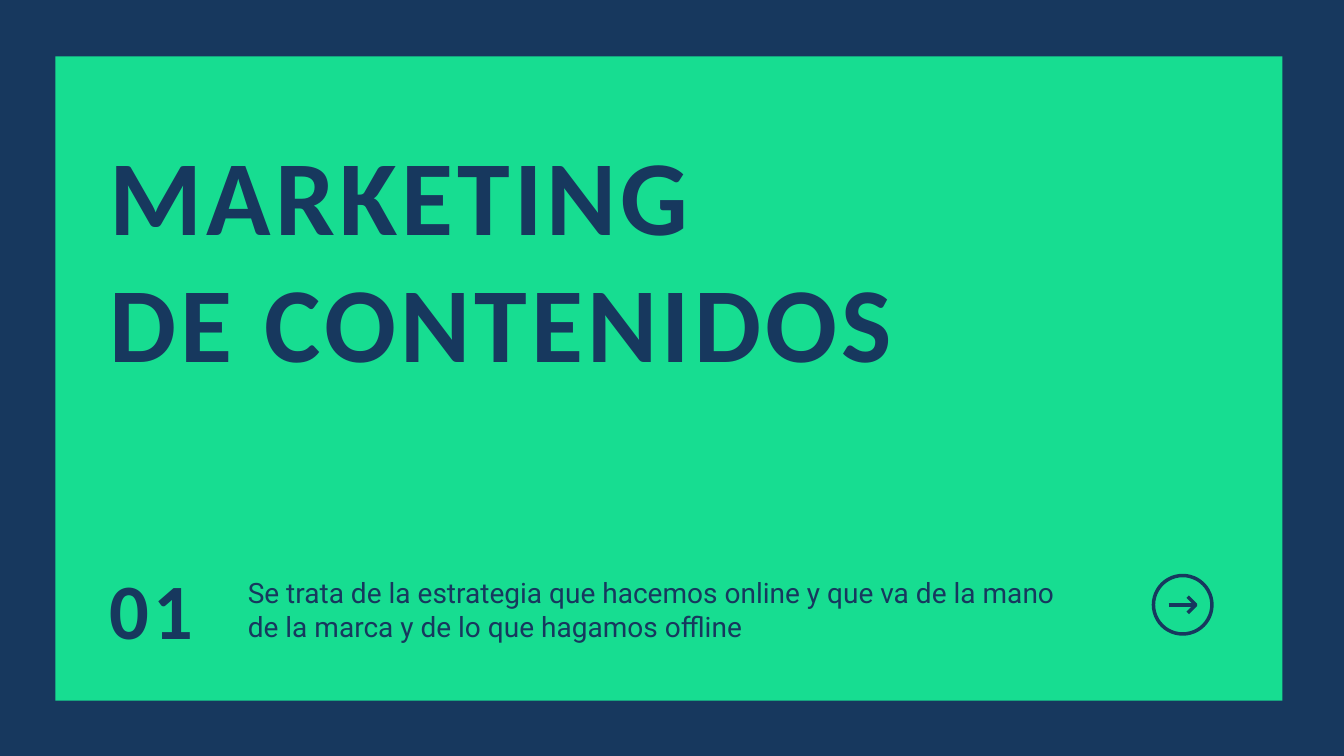
from lxml import etree
from pptx import Presentation
from pptx.dml.color import RGBColor
from pptx.enum.shapes import MSO_CONNECTOR, MSO_SHAPE
from pptx.enum.text import MSO_ANCHOR
from pptx.oxml.ns import qn
from pptx.util import Inches, Pt

RECTANGLE = MSO_SHAPE.RECTANGLE
OVAL = MSO_SHAPE.OVAL
STRAIGHT = MSO_CONNECTOR.STRAIGHT
TOP = MSO_ANCHOR.TOP
MIDDLE = MSO_ANCHOR.MIDDLE
NAVY = "17385E"
GREEN = "17DD91"
BLANK_LAYOUT = 6


def paint(fill, color):
    fill.solid()
    fill.fore_color.rgb = RGBColor.from_string(color)


def outline(shape):
    paint(shape.line.fill, NAVY)
    shape.line.width = Pt(2.5)


def add_panel(slide, left, top, width, height):
    panel = slide.shapes.add_shape(
        RECTANGLE, Inches(left), Inches(top), Inches(width), Inches(height))
    panel.shadow.inherit = False
    paint(panel.fill, GREEN)
    panel.line.fill.background()


def add_text(slide, lines, left, top, width, height, size, font,
             bold=False, spacing=0, anchor=TOP):
    box = slide.shapes.add_textbox(
        Inches(left), Inches(top), Inches(width), Inches(height))
    frame = box.text_frame
    frame.word_wrap = True
    frame.vertical_anchor = anchor
    frame.text = "\n".join(lines)
    for paragraph in frame.paragraphs:
        paragraph.font.size = Pt(size)
        paragraph.font.name = font
        paragraph.font.bold = bold
        paragraph.font.color.rgb = RGBColor.from_string(NAVY)
        if spacing:
            for run in paragraph.runs:
                run.font._element.set("spc", str(spacing * 100))


def add_arrow_button(slide, center_x, center_y, diameter):
    radius = diameter / 2
    ring = slide.shapes.add_shape(
        OVAL, Inches(center_x - radius), Inches(center_y - radius),
        Inches(diameter), Inches(diameter))
    ring.shadow.inherit = False
    ring.fill.background()
    outline(ring)

    tip = center_x + 0.13
    shaft = slide.shapes.add_connector(
        STRAIGHT, Inches(center_x - 0.14), Inches(center_y),
        Inches(tip - 0.01), Inches(center_y))
    outline(shaft)
    etree.SubElement(shaft._element.spPr, qn("a:effectLst"))

    back = Inches(tip - 0.08)
    builder = slide.shapes.build_freeform(back, Inches(center_y - 0.08))
    builder.add_line_segments(
        [(Inches(tip), Inches(center_y)), (back, Inches(center_y + 0.08))],
        close=False)
    head = builder.convert_to_shape()
    head.shadow.inherit = False
    head.fill.background()
    outline(head)


def main():
    deck = Presentation()
    deck.slide_width = Inches(13.33)
    deck.slide_height = Inches(7.5)
    slide = deck.slides.add_slide(deck.slide_layouts[BLANK_LAYOUT])
    paint(slide.background.fill, NAVY)

    add_panel(slide, 0.55, 0.56, 12.17, 6.39)
    add_text(slide, ["MARKETING", "DE CONTENIDOS"], 0.99, 1.23, 10.27, 2.17,
             76, "Calibri", bold=True, spacing=3)
    add_arrow_button(slide, 11.73, 6, 0.58)
    add_text(slide, ["01"], 0.99, 5.78, 9.04, 0.5,
             56, "Calibri", bold=True, spacing=3, anchor=MIDDLE)
    add_text(slide, ["Se trata de la estrategia que hacemos online y que va de "
                     "la mano de la marca y de lo que hagamos offline"],
             2.36, 5.66, 8.54, 0.77, 20, "Roboto")

    deck.save("out.pptx")


if __name__ == "__main__":
    main()
